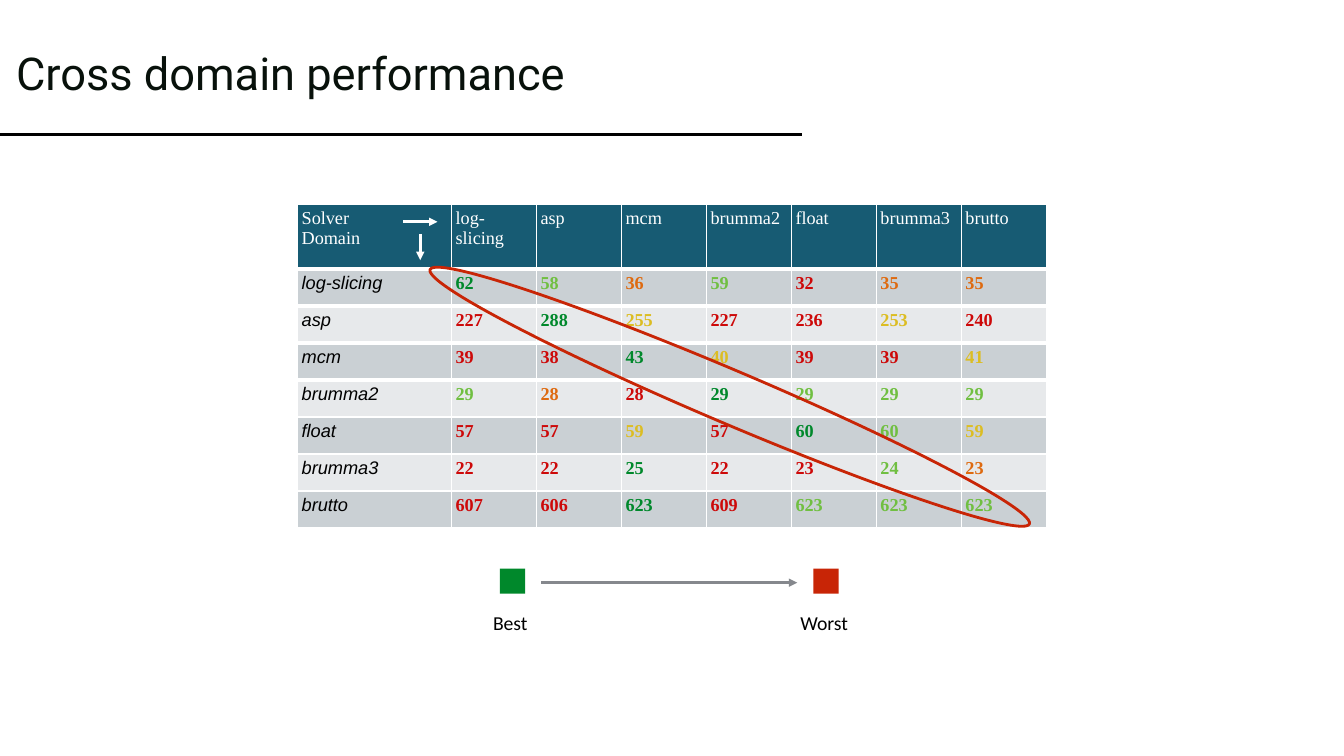
from lxml import etree
from pptx import Presentation
from pptx import util as u
from pptx.dml.color import RGBColor
from pptx.enum import shapes, text
from pptx.oxml import ns

Pt = u.Pt

COLOURS = {
    "ink": "08110B", "black": "000000", "white": "FFFFFF", "grey": "85888D",
    "header": "175B73", "odd": "CAD0D4", "even": "E7E9EB", "alert": "C82506",
    "G": "00882B", "L": "70BF41", "Y": "DCBD23", "O": "DE6A10", "R": "CD0909",
}
SOLVERS = ["log-slicing", "asp", "mcm", "brumma2", "float", "brumma3", "brutto"]
GRADED_SCORES = [
    "62G 58L 36O 59L 32R 35O 35O",
    "227R 288G 255Y 227R 236R 253Y 240R",
    "39R 38R 43G 40Y 39R 39R 41Y",
    "29L 28O 28R 29G 29L 29L 29L",
    "57R 57R 59Y 57R 60G 60L 59Y",
    "22R 22R 25G 22R 23R 24L 23O",
    "607R 606R 623G 609R 623L 623L 623L",
]
HEADER_FONT = {"name": "Times New Roman", "size": Pt(13), "bold": False}
DOMAIN_FONT = {"name": "Arial", "size": Pt(13), "bold": False, "italic": True}
SCORE_FONT = {"name": "Times New Roman", "size": Pt(13), "bold": True}
TITLE_FONT = {"name": "Roboto", "size": Pt(32.3), "bold": False}
LABEL_FONT = {"name": "Calibri", "size": Pt(14.1)}
MARGINS = {f"margin_{side}": Pt(3) for side in ("left", "right", "top", "bottom")}


def colour(name):
    return RGBColor.from_string(COLOURS[name])


def assign(target, values):
    for name, value in values.items():
        setattr(target, name, value)


class SlideBuilder:
    def __init__(self, deck):
        self.page = deck.slides.add_slide(deck.slide_layouts[5])

    def set_text(self, frame, wording, font, tint):
        frame.text = wording
        for para in frame.paragraphs:
            para.alignment = text.PP_ALIGN.LEFT
            for span in para.runs:
                assign(span.font, font)
                span.font.color.rgb = colour(tint)

    def title(self, wording, left, top, width, height):
        box = self.page.shapes.title
        assign(box, {"left": Pt(left), "top": Pt(top),
                     "width": Pt(width), "height": Pt(height)})
        self.set_text(box.text_frame, wording, TITLE_FONT, "ink")
        assign(box.text_frame, {"vertical_anchor": text.MSO_ANCHOR.MIDDLE,
                                "auto_size": text.MSO_AUTO_SIZE.NONE})
        box.text_frame.paragraphs[0].line_spacing = 0.9

    def label(self, wording, left, top, width, height):
        box = self.page.shapes.add_textbox(Pt(left), Pt(top), Pt(width), Pt(height))
        assign(box.text_frame, MARGINS)
        assign(box.text_frame, {"word_wrap": False,
                                "vertical_anchor": text.MSO_ANCHOR.MIDDLE,
                                "auto_size": text.MSO_AUTO_SIZE.SHAPE_TO_FIT_TEXT})
        self.set_text(box.text_frame, wording, LABEL_FONT, "black")

    def line(self, start, end, tint, weight=2, arrow=True):
        connector = self.page.shapes.add_connector(
            shapes.MSO_CONNECTOR.STRAIGHT, *map(Pt, start + end))
        connector.line.color.rgb = colour(tint)
        connector.line.width = Pt(weight)
        properties = connector.element.spPr
        if arrow:
            outline = properties.find(ns.qn("a:ln"))
            etree.SubElement(outline, ns.qn("a:tailEnd"), type="triangle")
        etree.SubElement(properties, ns.qn("a:effectLst"))

    def shape(self, kind, left, top, width, height, fill=None, outline=None, turn=0):
        figure = self.page.shapes.add_shape(
            kind, Pt(left), Pt(top), Pt(width), Pt(height))
        figure.shadow.inherit = False
        figure.rotation = turn
        if fill:
            figure.fill.solid()
            figure.fill.fore_color.rgb = colour(fill)
        else:
            figure.fill.background()
        if outline:
            figure.line.color.rgb = colour(outline)
            figure.line.width = Pt(2)
        else:
            figure.line.fill.background()

    def table(self, left, top, widths, heights):
        frame = self.page.shapes.add_table(
            len(heights), len(widths), Pt(left), Pt(top),
            Pt(sum(widths)), Pt(sum(heights)))
        grid = frame.table
        assign(grid, {"first_row": False, "horz_banding": False})
        for column, width in zip(grid.columns, widths):
            column.width = Pt(width)
        for row, height in zip(grid.rows, heights):
            row.height = Pt(height)
        return grid

    def cell(self, cell, wording, font, tint, fill, borders):
        assign(cell, MARGINS)
        self.set_text(cell.text_frame, wording, font, tint)
        cell.fill.solid()
        cell.fill.fore_color.rgb = colour(fill)
        for position, (side, weight) in enumerate(borders.items()):
            edge = etree.Element(ns.qn(f"a:ln{side}"), w=str(Pt(weight)))
            paint = etree.SubElement(edge, ns.qn("a:solidFill"))
            etree.SubElement(paint, ns.qn("a:srgbClr"), val=COLOURS["white"])
            cell._tc.tcPr.insert(position, edge)


def fill_scores(builder, grid):
    for r in range(len(SOLVERS) + 1):
        borders = {"L": 1, "R": 1, "T": 3 if 1 <= r <= 4 else 1, "B": 3 if r <= 3 else 1}
        if r == 0:
            fill = "header"
            entries = [(name, HEADER_FONT, "white") for name in ["Solver\nDomain"] + SOLVERS]
        else:
            fill = "odd" if r % 2 else "even"
            entries = [(SOLVERS[r - 1], DOMAIN_FONT, "black")]
            entries += [(score[:-1], SCORE_FONT, score[-1])
                        for score in GRADED_SCORES[r - 1].split()]
        for c, (wording, font, tint) in enumerate(entries):
            builder.cell(grid.cell(r, c), wording, font, tint, fill, borders)


def main():
    deck = Presentation()
    assign(deck, {"slide_width": Pt(960), "slide_height": Pt(540)})
    builder = SlideBuilder(deck)

    builder.title("Cross domain performance", 4.3, 2.2, 540.7, 104.4)
    builder.line((0, 96), (573, 96), "black", weight=2.25, arrow=False)

    grid = builder.table(212.5, 146.2, [110] + [60.7] * 7, [46] + [26.43] * 7)
    fill_scores(builder, grid)
    builder.line((288, 158.4), (312.5, 158.4), "white")
    builder.line((300.2, 167), (300.2, 185.8), "white")

    for wording, fill, square_left, label_left, label_width in (
            ("Best", "G", 357.1, 349.2, 31), ("Worst", "alert", 581, 568.8, 40.3)):
        builder.shape(shapes.MSO_SHAPE.RECTANGLE, square_left, 406.1, 18, 18, fill=fill)
        builder.label(wording, label_left, 433.4, label_width, 23)
    builder.line((386.6, 416.2), (569.5, 416.2), "grey")

    builder.shape(shapes.MSO_SHAPE.OVAL, 288.7, 264.4, 465.1, 38,
                  outline="alert", turn=23)
    deck.save("out.pptx")


if __name__ == "__main__":
    main()
